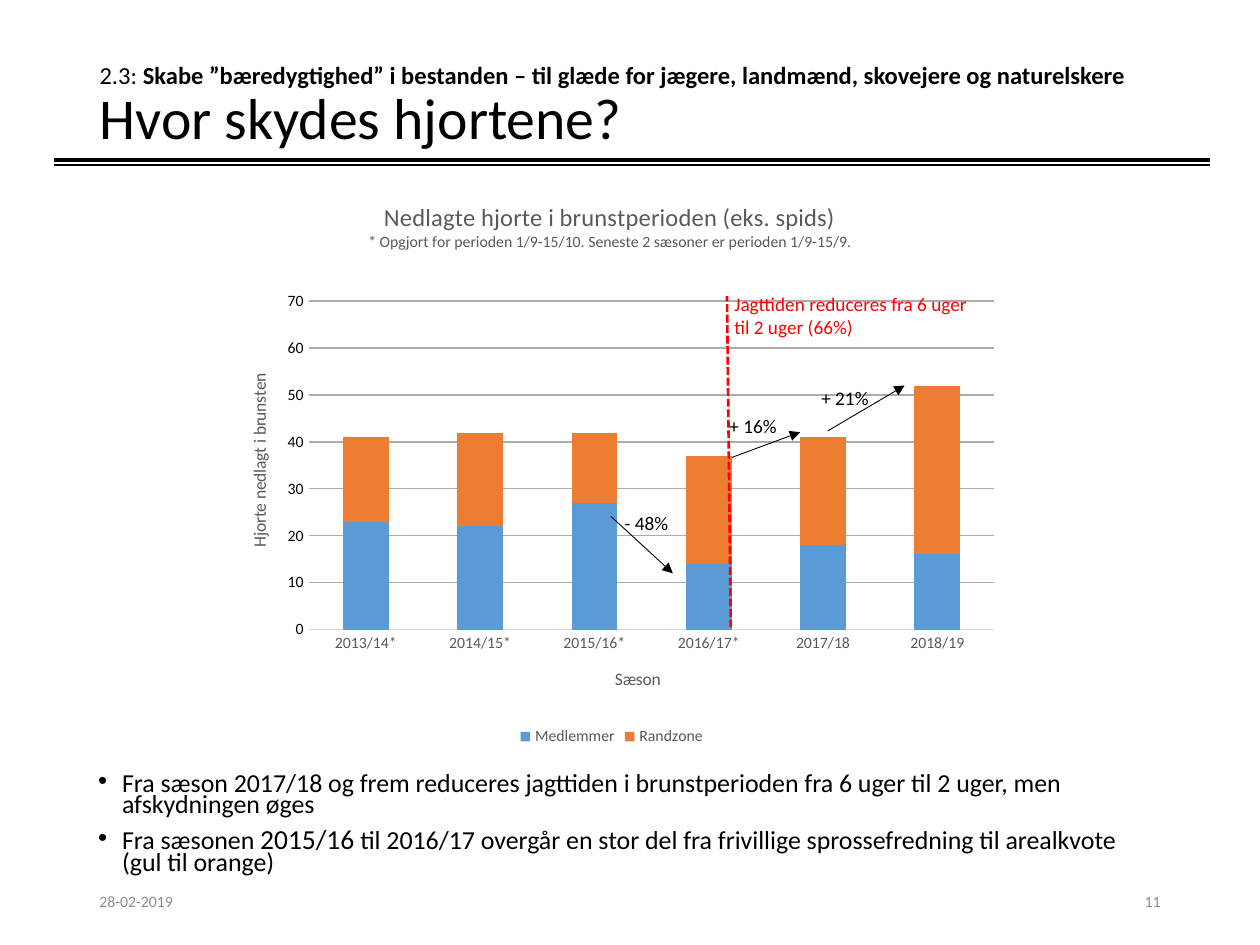
"""Build the slide on where stags are shot, with a stacked column chart and notes."""
from lxml import etree
from pptx import Presentation
from pptx.chart.data import CategoryChartData
from pptx.dml.color import RGBColor
from pptx.enum.chart import XL_CHART_TYPE, XL_LEGEND_POSITION, XL_TICK_MARK
from pptx.enum.dml import MSO_LINE
from pptx.enum.shapes import MSO_CONNECTOR
from pptx.enum.text import MSO_ANCHOR, MSO_AUTO_SIZE, PP_ALIGN
from pptx.oxml.ns import qn
from pptx.util import Inches, Pt

STACKED = XL_CHART_TYPE.COLUMN_STACKED
BOTTOM = XL_LEGEND_POSITION.BOTTOM
NO_TICK = XL_TICK_MARK.NONE
DASH = MSO_LINE.SQUARE_DOT
STRAIGHT = MSO_CONNECTOR.STRAIGHT
TOP, MIDDLE = MSO_ANCHOR.TOP, MSO_ANCHOR.MIDDLE
LEFT, RIGHT = PP_ALIGN.LEFT, PP_ALIGN.RIGHT
NO_FIT = MSO_AUTO_SIZE.NONE

THEME = {
    "font": "Calibri", "ink": "000000", "grey": "595959", "footer": "8C8C8C",
    "red": "FF0000", "grid": "AFABAB", "axis": "D9D9D9",
    "series": ["5B9BD5", "ED7D31"],
    "kicker_pt": 14, "title_pt": 33, "body_pt": 14.8, "season_pt": 15.7,
    "label_pt": 11, "chart_title_pt": 14, "axis_title_pt": 10, "small_pt": 9,
}

KICKER = ("2.3: ", "Skabe ”bæredygtighed” i bestanden – til glæde for jægere, "
          "landmænd, skovejere og naturelskere")
TITLE = "Hvor skydes hjortene?"
BULLETS = [
    [("Fra sæson 2017/18 og frem reduceres jagttiden i brunstperioden fra "
      "6 uger til 2 uger, men afskydningen øges", "body_pt")],
    [("Fra sæsonen ", "body_pt"), ("2015/16", "season_pt"),
     (" til 2016/17 overgår en stor del fra frivillige sprossefredning til "
      "arealkvote (gul til orange)", "body_pt")],
]
SEASONS = ["2013/14*", "2014/15*", "2015/16*", "2016/17*", "2017/18", "2018/19"]
STAGS = {"Medlemmer": [23, 22, 27, 14, 18, 16],
         "Randzone": [18, 20, 15, 23, 23, 36]}
CHART_TITLE = "Nedlagte hjorte i brunstperioden (eks. spids)"
CHART_NOTE = "* Opgjort for perioden 1/9-15/10. Seneste 2 sæsoner er perioden 1/9-15/9."
X_TITLE, Y_TITLE = "Sæson", "Hjorte nedlagt i brunsten"

HEADER_RULES = [((0.43, 1.31), (9.6, 1.31), 1), ((0.43, 1.27), (9.6, 1.27), 2)]
ARROWS = [((4.85, 4.1), (5.34, 4.55)), ((6.57, 3.42), (7.18, 3.06)),
          ((5.81, 3.63), (6.35, 3.43))]
CUTOFF = ((5.8, 4.98), (5.77, 2.35))
LABELS = [
    ("- 48%", (4.86, 4.01, 0.66, 0.4), "ink"),
    ("+ 16%", (5.69, 3.24, 0.66, 0.4), "ink"),
    ("+ 21%", (6.42, 3.02, 0.66, 0.4), "ink"),
    ("Jagttiden reduceres fra 6 uger til 2 uger (66%)",
     (5.73, 2.27, 2.12, 0.5), "red"),
]
FOOTERS = [("28-02-2019", 0.69, LEFT), ("11", 7.06, RIGHT)]


def rgb(name):
    return RGBColor.from_string(THEME.get(name, name))


def style(font, size, color="ink", bold=False):
    values = {"name": THEME["font"], "size": Pt(THEME[size]), "bold": bold}
    for key, value in values.items():
        setattr(font, key, value)
    font.color.rgb = rgb(color)


def add_run(p, text, size, color="ink", bold=False):
    r = p.add_run()
    r.text = text
    style(r.font, size, color, bold)


def add_box(s, box, anchor=TOP):
    tf = s.shapes.add_textbox(*map(Inches, box)).text_frame
    tf.word_wrap = True
    tf.vertical_anchor = anchor
    return tf


def add_line(s, start, end, width, color="ink", arrow=False, dash=None):
    line = s.shapes.add_connector(STRAIGHT, *map(Inches, start + end))
    line.line.color.rgb = rgb(color)
    line.line.width = Pt(width)
    if dash:
        line.line.dash_style = dash
    if arrow:
        etree.SubElement(line.line._get_or_add_ln(), qn("a:tailEnd"), type="triangle")
    etree.SubElement(line._element.spPr, qn("a:effectLst"))


def place(element, index, **fractions):
    layout = element.find(qn("c:layout"))
    if layout is None:
        layout = etree.Element(qn("c:layout"))
        element.insert(index, layout)
    manual = etree.SubElement(layout, qn("c:manualLayout"))
    if "w" in fractions:
        etree.SubElement(manual, qn("c:layoutTarget"), val="inner")
    for key in ("x", "y"):
        etree.SubElement(manual, qn(f"c:{key}Mode"), val="edge")
    for key, value in fractions.items():
        etree.SubElement(manual, qn(f"c:{key}"), val=str(value))


def add_title(s):
    title = s.shapes.title
    title.left, title.top, title.width, title.height = map(
        Inches, (0.69, 0.13, 8.62, 1.45))
    tf = title.text_frame
    tf.auto_size, tf.vertical_anchor = NO_FIT, MIDDLE
    p = tf.paragraphs[0]
    p.alignment, p.line_spacing = LEFT, 0.9
    add_run(p, KICKER[0], "kicker_pt")
    add_run(p, KICKER[1], "kicker_pt", bold=True)
    p.add_line_break()
    add_run(p, TITLE, "title_pt")


def add_bullets(s):
    tf = add_box(s, (0.68, 6.1, 8.62, 0.96))
    for i, runs in enumerate(BULLETS):
        p = tf.add_paragraph() if i else tf.paragraphs[0]
        p.line_spacing = 0.7
        p.space_before = Pt(7.5 if i else 0)
        pPr = p._p.get_or_add_pPr()
        pPr.set("marL", str(Inches(0.19)))
        pPr.set("indent", str(Inches(-0.19)))
        etree.SubElement(pPr, qn("a:buFont"), typeface="Arial")
        etree.SubElement(pPr, qn("a:buChar"), char="•")
        for text, size in runs:
            add_run(p, text, size)


def add_stag_chart(s):
    data = CategoryChartData()
    data.categories = SEASONS
    for name, values in STAGS.items():
        data.add_series(name, values)
    chart = s.shapes.add_chart(
        STACKED, *map(Inches, (1.69, 1.38, 6.33, 4.58)), data).chart
    style(chart.font, "axis_title_pt")

    tf = chart.chart_title.text_frame
    add_run(tf.paragraphs[0], CHART_TITLE, "chart_title_pt", "grey")
    add_run(tf.add_paragraph(), CHART_NOTE, "small_pt", "grey")
    place(chart.chart_title._element, 1, x=0.19, y=0.04)

    plot = chart.plots[0]
    plot.gap_width, plot.overlap, plot.vary_by_categories = 150, 100, False
    for series, color in zip(plot.series, THEME["series"]):
        series.format.fill.solid()
        series.format.fill.fore_color.rgb = rgb(color)
    place(chart._chartSpace.chart.plotArea, 0, x=0.12, y=0.18, w=0.86, h=0.61)

    x_axis, y_axis = chart.category_axis, chart.value_axis
    for axis, text, color, x, y in ((x_axis, X_TITLE, "grey", 0.5, 0.85),
                                    (y_axis, Y_TITLE, "ink", 0.04, 0.34)):
        axis.major_tick_mark = axis.minor_tick_mark = NO_TICK
        style(axis.tick_labels.font, "small_pt", color)
        add_run(axis.axis_title.text_frame.paragraphs[0], text,
                "axis_title_pt", "grey")
        place(axis.axis_title._element, 1, x=x, y=y)
    y_axis.axis_title._element.xpath(".//a:bodyPr")[0].set("rot", "-5400000")
    y_axis.minimum_scale, y_axis.maximum_scale, y_axis.major_unit = 0, 75, 10
    y_axis.format.line.fill.background()
    for line, color in ((x_axis.format.line, "axis"),
                        (y_axis.major_gridlines.format.line, "grid")):
        line.color.rgb = rgb(color)
        line.width = Pt(0.75)

    chart.has_legend = True
    chart.legend.position, chart.legend.include_in_layout = BOTTOM, False
    style(chart.legend.font, "small_pt", "grey")


def main():
    prs = Presentation()
    prs.slide_width, prs.slide_height = Inches(10), Inches(7.5)
    s = prs.slides.add_slide(prs.slide_layouts[5])
    for start, end, width in HEADER_RULES:
        add_line(s, start, end, width)
    add_title(s)
    add_bullets(s)
    for text, left, align in FOOTERS:
        p = add_box(s, (left, 6.95, 2.25, 0.4), MIDDLE).paragraphs[0]
        p.alignment = align
        add_run(p, text, "small_pt", "footer")
    add_stag_chart(s)
    for start, end in ARROWS:
        add_line(s, start, end, 0.5, arrow=True)
    add_line(s, *CUTOFF, 1.5, "red", dash=DASH)
    for text, box, color in LABELS:
        add_run(add_box(s, box).paragraphs[0], text, "label_pt", color)
    prs.save("out.pptx")


if __name__ == "__main__":
    main()
